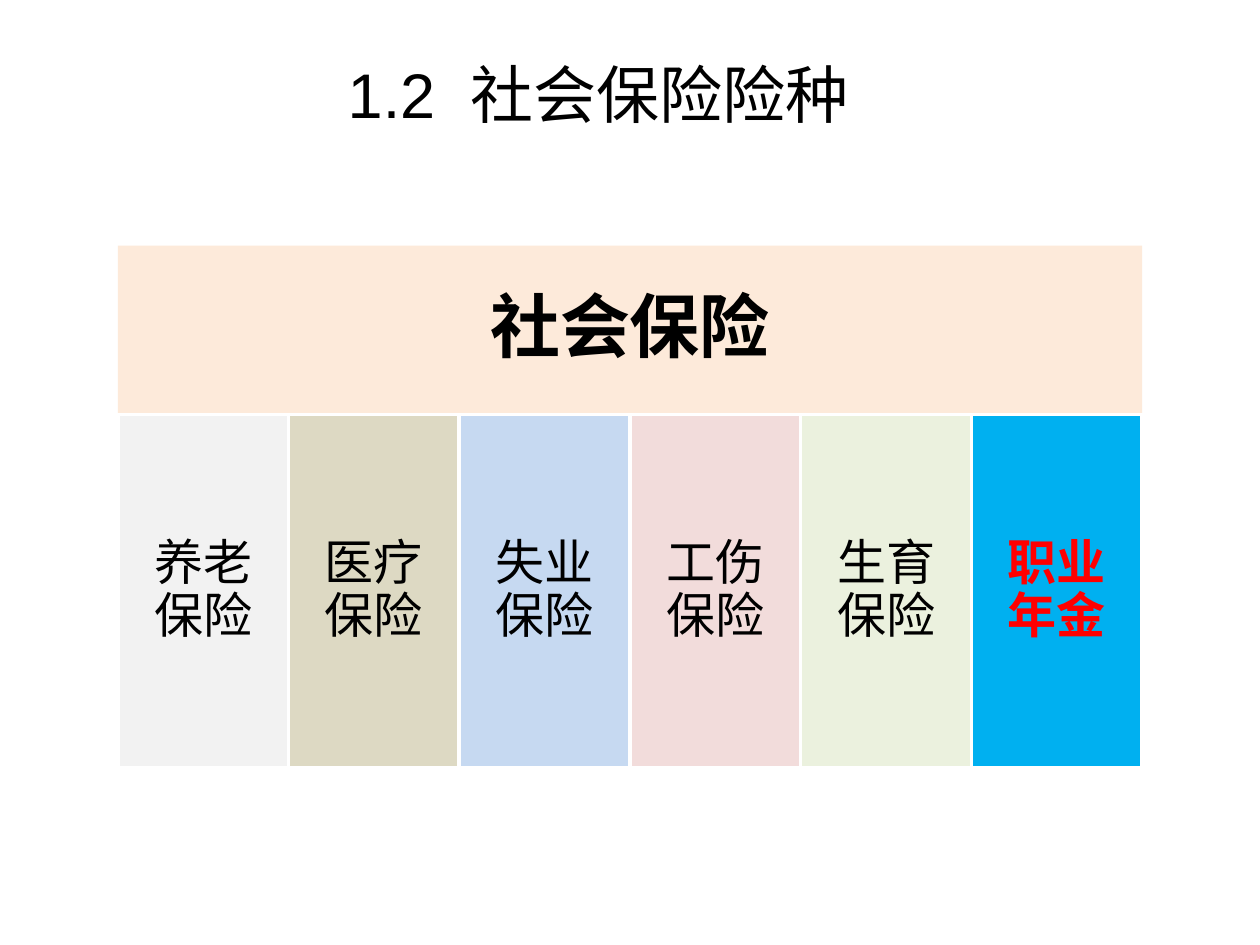
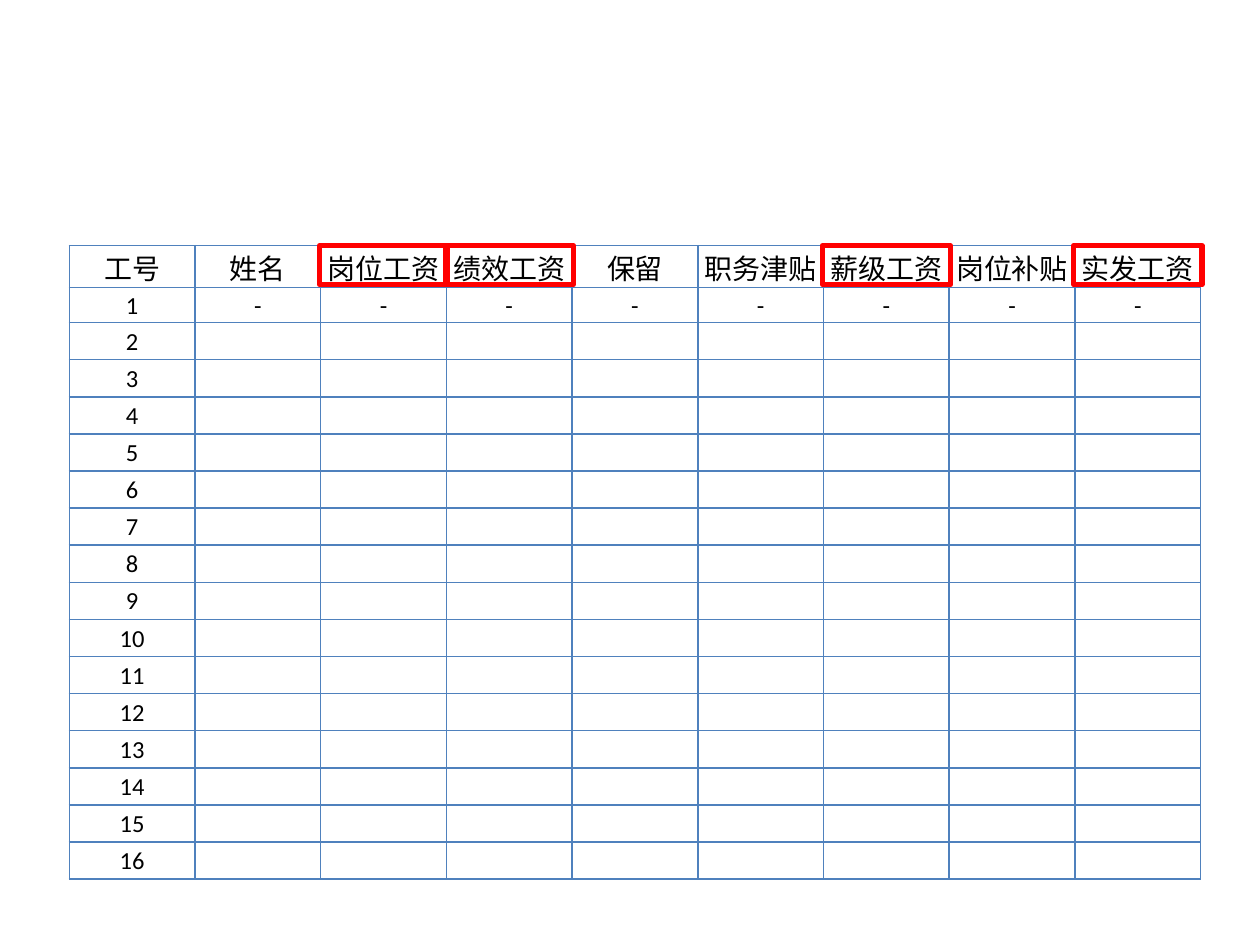
from lxml import etree
from pptx import Presentation, util as u
from pptx.dml.color import RGBColor
from pptx.enum import shapes, text
from pptx.oxml import ns

WIDE, HIGH = 10, 7.5
TOP = 1.95  # both slides start their content here
BLACK, RED, WHITE, BLUE = "000000", "FF0000", "FFFFFF", "4F81BD"

TITLE = ("1.2", " ", "社会保险险种")
GAP = 10  # extra points after the number in the title
BAND = "社会保险"
TILES = [
    ("养老保险", "F2F2F2", {}),
    ("医疗保险", "DDD9C3", {}),
    ("失业保险", "C6D9F1", {}),
    ("工伤保险", "F2DCDB", {}),
    ("生育保险", "EBF1DE", {}),
    ("职业年金", "00B0F0", {"bold": True, "color": RED}),
]
HEADS = ["工号", "姓名", "岗位工资", "绩效工资", "保留",
         "职务津贴", "薪级工资", "岗位补贴", "实发工资"]
MARKED = ["岗位工资", "绩效工资", "薪级工资", "实发工资"]
STAFF = 16


def hue(code):
    return RGBColor.from_string(code)


def put(item, **values):
    for name, value in values.items():
        setattr(item, name, value)


def style(font, size, name="Calibri", color=BLACK, bold=False):
    put(font, size=u.Pt(size), name=name, bold=bold)
    font.color.rgb = hue(color)


def place(item, x, y, w, h):
    put(item, left=u.Inches(x), top=u.Inches(y),
        width=u.Inches(w), height=u.Inches(h))


def inset(item, left, top, right, low):
    put(item, margin_left=u.Inches(left), margin_top=u.Inches(top),
        margin_right=u.Inches(right), margin_bottom=u.Inches(low))


def rect(slide, spot, fill=None, line=None, weight=2):
    box = slide.shapes.add_shape(shapes.MSO_SHAPE.RECTANGLE,
                                 *map(u.Inches, spot))
    box.shadow.inherit = False
    for part, color in ((box.fill, fill), (box.line.fill, line)):
        if color:
            part.solid()
            part.fore_color.rgb = hue(color)
        else:
            part.background()
    if line:
        box.line.width = u.Pt(weight)
    return box


def label(box, words, size, pad, **look):
    frame = box.text_frame
    put(frame, word_wrap=True, vertical_anchor=text.MSO_ANCHOR.MIDDLE)
    inset(frame, pad, pad, pad, pad)
    para = frame.paragraphs[0]
    put(para, text=words, alignment=text.PP_ALIGN.CENTER, line_spacing=0.9)
    style(para.runs[0].font, size, **look)


def border(cell):
    props = cell._tc.get_or_add_tcPr()
    for spot, side in enumerate(("lnL", "lnR", "lnT", "lnB")):
        edge = etree.Element(ns.qn("a:" + side), w=str(u.Pt(1)))
        fill = etree.SubElement(edge, ns.qn("a:solidFill"))
        etree.SubElement(fill, ns.qn("a:srgbClr"), val=BLUE)
        props.insert(spot, edge)


def write(cell, words, size):
    cell.fill.background()
    border(cell)
    cell.vertical_anchor = text.MSO_ANCHOR.MIDDLE
    inset(cell, 0.01, 0.01, 0.01, 0)
    para = cell.text_frame.paragraphs[0]
    para.alignment = text.PP_ALIGN.CENTER
    if words:
        para.text = words
        style(para.runs[0].font, size)
    else:  # keeps an empty row from growing
        para._p.get_or_add_endParaRPr().set("sz", str(size * 100))


def kinds(deck):
    """Slide with the title, the band and one tile for each insurance."""
    slide = deck.slides.add_slide(deck.slide_layouts[5])
    title = slide.shapes.title
    place(title, 2.66, 0.39, 5.28, 0.71)
    put(title.text_frame, word_wrap=True, auto_size=text.MSO_AUTO_SIZE.NONE,
        vertical_anchor=text.MSO_ANCHOR.TOP)
    para = title.text_frame.paragraphs[0]
    para.alignment = text.PP_ALIGN.LEFT
    for words in TITLE:
        run = para.add_run()
        run.text = words
        style(run.font, 36, "Arial")
        if words == " ":
            run.font._element.set("spc", str(GAP * 100))

    wide, band, tall = 8.13, 1.33, 2.8
    left = (WIDE - wide) / 2
    step = wide / len(TILES)
    label(rect(slide, (left, TOP, wide, band), "FDEADA"),
          BAND, 40, 0.17, bold=True)
    for i, (words, fill, look) in enumerate(TILES):
        spot = left + i * step, TOP + band + 0.01, step, tall
        label(rect(slide, spot, fill, WHITE), words, 28, 0.12, **look)


def wages(deck):
    """Slide with the wage table and red frames on the marked heads."""
    slide = deck.slides.add_slide(deck.slide_layouts[6])
    left, wide, end = 0.55, 8.98, 6.98
    step = wide / len(HEADS)
    first = [0.33, 0.28]
    rest = (end - TOP - sum(first)) / (STAFF - 1)
    blank = len(HEADS) - 1
    rows = [HEADS] + [[str(n)] + ["-" if n == 1 else ""] * blank
                      for n in range(1, STAFF + 1)]

    grid = slide.shapes.add_table(
        len(rows), len(HEADS),
        *map(u.Inches, (left, TOP, wide, end - TOP))).table
    put(grid, first_row=False, horz_banding=False)
    for col in grid.columns:
        col.width = u.Inches(step)
    for r, row in enumerate(rows):
        grid.rows[r].height = u.Inches(first[r] if r < 2 else rest)
        for c, words in enumerate(row):
            write(grid.cell(r, c), words, 14 if r else 16)

    for head in MARKED:
        x = left + HEADS.index(head) * step - 0.01
        rect(slide, (x, TOP, step + 0.02, 0.31), line=RED, weight=3)


def main():
    deck = Presentation()
    put(deck, slide_width=u.Inches(WIDE), slide_height=u.Inches(HIGH))
    kinds(deck)
    wages(deck)
    deck.save("out.pptx")


if __name__ == "__main__":
    main()
